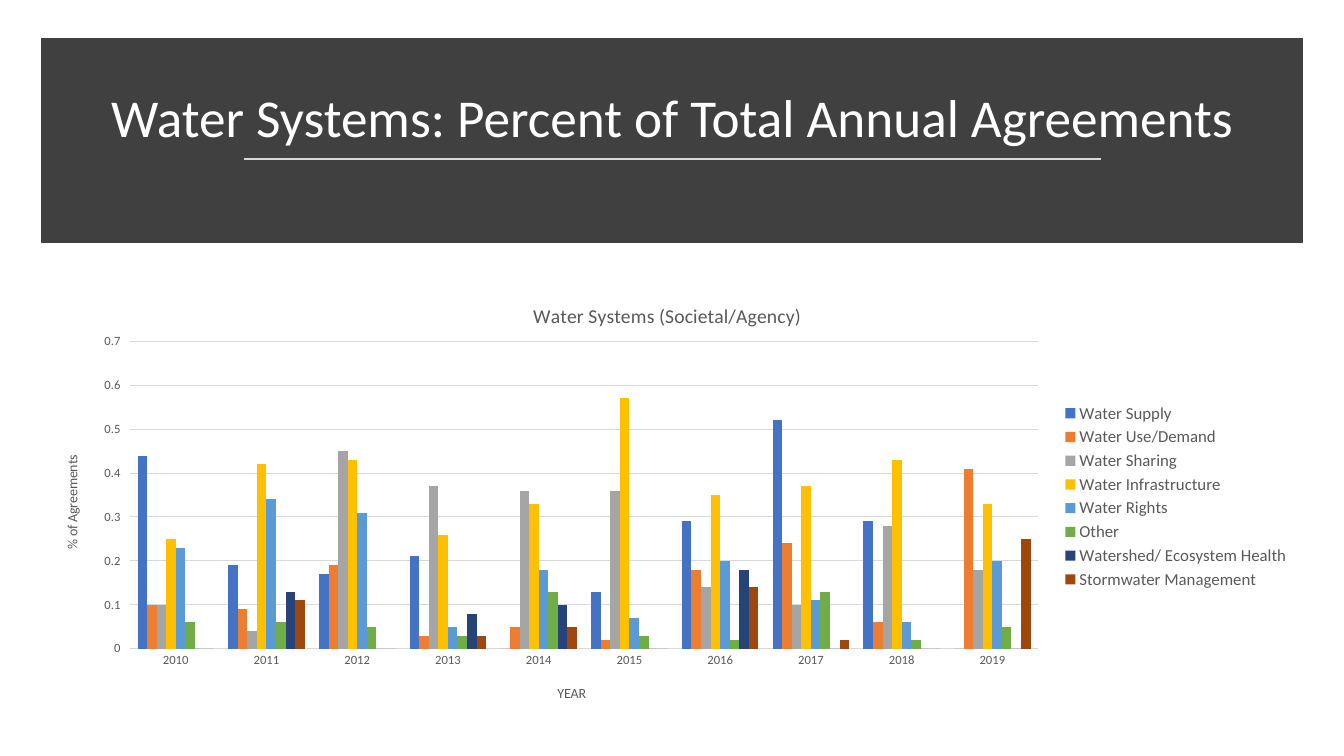
from lxml import etree
from pptx import Presentation
from pptx import util as u
from pptx.chart import data
from pptx.dml import color
from pptx.enum import chart as charts, shapes, text
from pptx.oxml import ns

COLORS = {
    "band": "404040", "white": "FFFFFF", "rule": "D9D9D9", "label": "595959",
    "blue": "4472C4", "orange": "ED7D31", "gray": "A5A5A5", "gold": "FFC000",
    "sky": "5B9BD5", "green": "70AD47", "navy": "264478", "brown": "9E480E",
}
YEARS = [str(year) for year in range(2010, 2020)]
SERIES = [
    ("Water Supply", "blue", (0.44, 0.19, 0.17, 0.21, 0, 0.13, 0.29, 0.52, 0.29, 0)),
    ("Water Use/Demand", "orange", (0.1, 0.09, 0.19, 0.03, 0.05, 0.02, 0.18, 0.24, 0.06, 0.41)),
    ("Water Sharing", "gray", (0.1, 0.04, 0.45, 0.37, 0.36, 0.36, 0.14, 0.1, 0.28, 0.18)),
    ("Water Infrastructure", "gold", (0.25, 0.42, 0.43, 0.26, 0.33, 0.57, 0.35, 0.37, 0.43, 0.33)),
    ("Water Rights", "sky", (0.23, 0.34, 0.31, 0.05, 0.18, 0.07, 0.2, 0.11, 0.06, 0.2)),
    ("Other", "green", (0.06, 0.06, 0.05, 0.03, 0.13, 0.03, 0.02, 0.13, 0.02, 0.05)),
    ("Watershed/ Ecosystem Health", "navy", (0, 0.13, 0, 0.08, 0.1, 0, 0.18, 0, 0, 0)),
    ("Stormwater Management", "brown", (0, 0.11, 0, 0.03, 0.05, 0, 0.14, 0.02, 0, 0.25)),
]


class SlideBuilder:
    font = "Calibri"
    width, height = 13.33, 7.5
    columns, rows = 133.3, 75

    def __init__(self, presentation):
        presentation.slide_width = u.Inches(self.width)
        presentation.slide_height = u.Inches(self.height)
        self.slide = presentation.slides.add_slide(presentation.slide_layouts[5])

    def grid(self, left, top, width, height):
        column, row = self.width / self.columns, self.height / self.rows
        return [u.Inches(value) for value in (left * column, top * row, width * column, height * row)]

    def rgb(self, name):
        return color.RGBColor.from_string(COLORS[name])

    def style(self, font, size, name):
        font.name, font.size, font.bold = self.font, u.Pt(size), False
        font.color.rgb = self.rgb(name)

    def stroke(self, line, name, width):
        line.color.rgb = self.rgb(name)
        line.width = u.Pt(width)

    def title(self, wording, place, size, name):
        title = self.slide.shapes.title
        title.left, title.top, title.width, title.height = self.grid(*place)
        frame = title.text_frame
        frame.word_wrap = True
        frame.auto_size = text.MSO_AUTO_SIZE.NONE
        frame.vertical_anchor = text.MSO_ANCHOR.BOTTOM
        paragraph = frame.paragraphs[0]
        paragraph.alignment = text.PP_ALIGN.CENTER
        paragraph.line_spacing = 0.9
        run = paragraph.add_run()
        run.text = wording
        self.style(run.font, size, name)

    def band(self, place, name):
        shape = self.slide.shapes.add_shape(shapes.MSO_SHAPE.RECTANGLE, *self.grid(*place))
        shape.shadow.inherit = False
        shape.fill.solid()
        shape.fill.fore_color.rgb = self.rgb(name)
        self.stroke(shape.line, name, 10)
        shape.line.width = u.Pt(1)
        self.slide.shapes.title.element.addprevious(shape.element)

    def rule(self, left, right, row, name, width):
        x1, y, x2, y2 = self.grid(left, row, right, row)
        line = self.slide.shapes.add_connector(shapes.MSO_CONNECTOR.STRAIGHT, x1, y, x2, y2)
        self.stroke(line.line, name, width)
        etree.SubElement(line.element.spPr, ns.qn("a:effectLst"))

    def layout(self, element, index, **shares):
        for old in element.findall(ns.qn("c:layout")):
            element.remove(old)
        layout = etree.Element(ns.qn("c:layout"))
        manual = etree.SubElement(layout, ns.qn("c:manualLayout"))
        if "w" in shares and index == 0:
            etree.SubElement(manual, ns.qn("c:layoutTarget")).set("val", "inner")
        for key in ("x", "y"):
            etree.SubElement(manual, ns.qn(f"c:{key}Mode")).set("val", "edge")
        for key, value in shares.items():
            etree.SubElement(manual, ns.qn(f"c:{key}")).set("val", str(value))
        element.insert(index, layout)

    def chart_title(self, title, wording, size, x, y, rotation=0):
        run = title.text_frame.paragraphs[0].add_run()
        run.text = wording
        self.style(run.font, size, "label")
        body = title._element.find(".//" + ns.qn("a:bodyPr"))
        body.set("rot", str(rotation * 60000))
        body.set("vert", "horz")
        self.layout(title._element, 1, x=x, y=y)

    def axis(self, axis, wording, x, y, rotation=0):
        self.style(axis.tick_labels.font, 9, "label")
        axis.minor_tick_mark = charts.XL_TICK_MARK.NONE
        self.chart_title(axis.axis_title, wording, 10, x, y, rotation)

    def column_chart(self, place):
        chart_data = data.CategoryChartData()
        chart_data.categories = YEARS
        for name, _, values in SERIES:
            chart_data.add_series(name, values)
        frame = self.slide.shapes.add_chart(
            charts.XL_CHART_TYPE.COLUMN_CLUSTERED, *self.grid(*place), chart_data)
        chart = frame.chart
        self.style(chart.font, 10, "label")
        chart.has_title = True
        self.chart_title(chart.chart_title, "Water Systems (Societal/Agency)", 14, 0.39, 0.05)

        plot = chart.plots[0]
        plot.gap_width, plot.overlap, plot.vary_by_categories = 150, 0, False
        for series, (_, name, _) in zip(plot.series, SERIES):
            series.format.fill.solid()
            series.format.fill.fore_color.rgb = self.rgb(name)
            series.invert_if_negative = False

        years, shares = chart.category_axis, chart.value_axis
        self.axis(years, "YEAR", 0.41, 0.92)
        years.major_tick_mark = charts.XL_TICK_MARK.NONE
        self.stroke(years.format.line, "rule", 0.75)
        self.axis(shares, "% of Agreements", 0.02, 0.4, -90)
        shares.major_tick_mark = charts.XL_TICK_MARK.OUTSIDE
        shares.minimum_scale, shares.maximum_scale, shares.major_unit = 0, 0.7, 0.1
        shares.tick_labels.number_format = "General"
        shares.tick_labels.number_format_is_linked = False
        shares.format.line.fill.background()
        self.stroke(shares.major_gridlines.format.line, "rule", 0.75)

        chart.has_legend = True
        legend = chart.legend
        legend.position = charts.XL_LEGEND_POSITION.RIGHT
        legend.include_in_layout = False
        self.style(legend.font, 12, "label")
        self.layout(legend._element, 1, x=0.81, y=0.28, w=0.18, h=0.44)
        plot_area = chart.element.find(".//" + ns.qn("c:plotArea")) if hasattr(chart, "element") \
            else chart._chartSpace.find(".//" + ns.qn("c:plotArea"))
        self.layout(plot_area, 0, x=0.075, y=0.148, w=0.716, h=0.698)


def main():
    presentation = Presentation()
    builder = SlideBuilder(presentation)
    builder.band((4.1, 3.8, 125.1, 20.2), "band")
    builder.title("Water Systems: Percent of Total Annual Agreements",
                  (5.8, 5.1, 121.8, 10.2), 38, "white")
    builder.rule(24.2, 109.2, 15.8, "rule", 1.75)
    builder.column_chart((3.5, 27.4, 125.7, 43.7))
    presentation.save("out.pptx")


if __name__ == "__main__":
    main()
